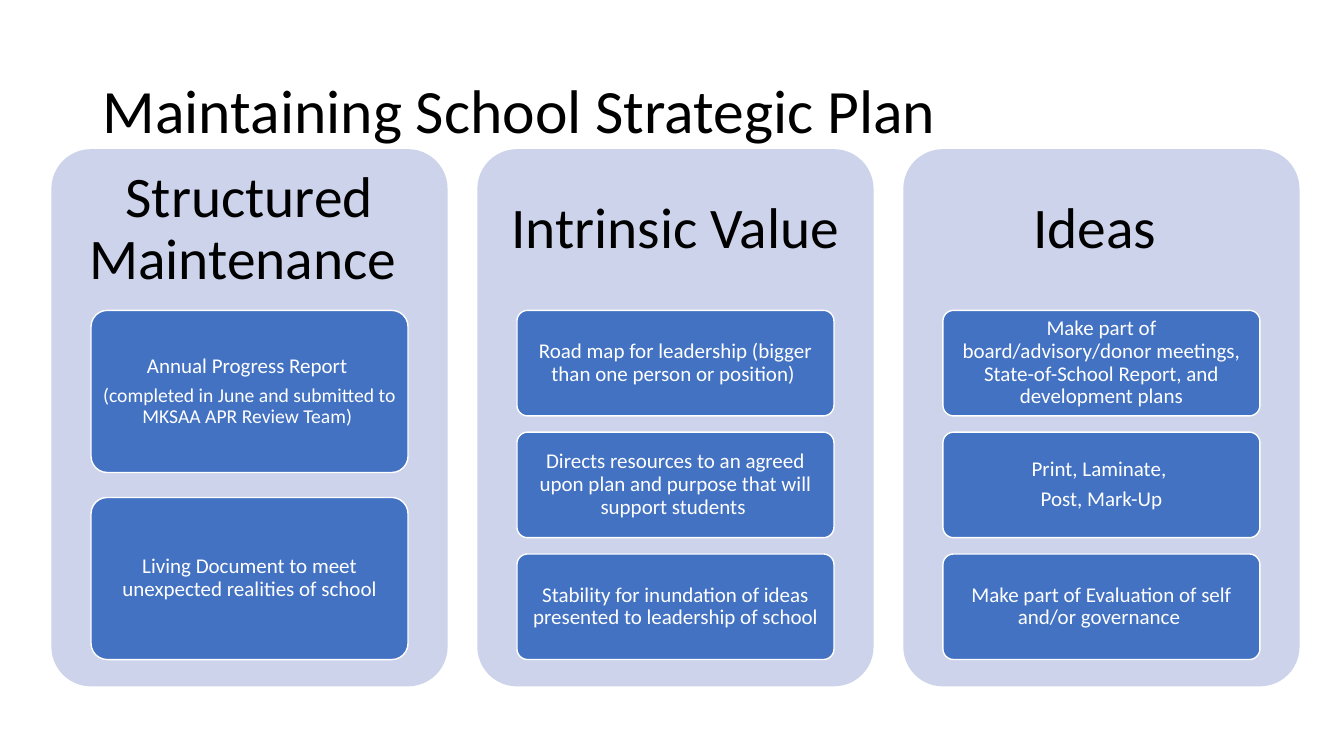
from dataclasses import dataclass

from pptx import Presentation
from pptx.dml.color import RGBColor
from pptx.enum.shapes import MSO_SHAPE
from pptx.enum.text import MSO_ANCHOR, PP_ALIGN
from pptx.util import Inches, Pt

ROUNDED = MSO_SHAPE.ROUNDED_RECTANGLE
MIDDLE = MSO_ANCHOR.MIDDLE
LEFT, CENTER = PP_ALIGN.LEFT, PP_ALIGN.CENTER

FONT = "Calibri"
BLACK, WHITE, PALE, BLUE = "000000", "FFFFFF", "CCD3EA", "4372C3"

SLIDE_W, SLIDE_H = 13.33, 7.5
PANEL_X, PANEL_Y, PANEL_W, PANEL_H = 0.51, 1.48, 3.93, 5.33
PANEL_PITCH = PANEL_W * 1.075
HEADING_SHARE, STACK_SHARE = 0.3, 0.65  # of the panel's height
CARD_SHARE = 0.8  # of the panel's width
GAP_SHARE = 0.154  # of a card's height


@dataclass(frozen=True)
class Box:
    x: float
    y: float
    w: float
    h: float

    def emu(self) -> list[int]:
        return [Inches(v) for v in (self.x, self.y, self.w, self.h)]


@dataclass(frozen=True)
class Line:
    text: str
    size: float = 15


@dataclass(frozen=True)
class Panel:
    heading: str
    cards: list[list[Line]]


PANELS = [
    Panel("Structured Maintenance ", [
        [Line("Annual Progress Report "),
         Line("(completed in June and submitted to MKSAA APR Review Team) ", 14)],
        [Line("Living Document to meet unexpected realities of school")],
    ]),
    Panel("Intrinsic Value", [
        [Line("Road map for leadership (bigger than one person or position) ")],
        [Line("Directs resources to an agreed upon plan and purpose that will "
              "support students ")],
        [Line("Stability for inundation of ideas presented to leadership of school")],
    ]),
    Panel("Ideas ", [
        [Line("Make part of board/advisory/donor meetings, State-of-School Report, "
              "and development plans")],
        [Line("Print, Laminate, "), Line("Post, Mark-Up")],
        [Line("Make part of Evaluation of self and/or governance ")],
    ]),
]


def rgb(value: str) -> RGBColor:
    return RGBColor.from_string(value)


def write(sp, lines: list[Line], color: str, inset_x: float, inset_y: float,
          align=CENTER) -> None:
    tf = sp.text_frame
    frame_format = {
        "word_wrap": True, "vertical_anchor": MIDDLE,
        "margin_left": Inches(inset_x), "margin_right": Inches(inset_x),
        "margin_top": Inches(inset_y), "margin_bottom": Inches(inset_y),
    }
    for name, value in frame_format.items():
        setattr(tf, name, value)
    for i, line in enumerate(lines):
        p = tf.add_paragraph() if i else tf.paragraphs[0]
        paragraph_format = {"alignment": align, "line_spacing": 0.9,
                            "space_before": Pt(5.2 if i else 0)}
        for name, value in paragraph_format.items():
            setattr(p, name, value)
        r = p.add_run()
        r.text = line.text
        r.font.name, r.font.size = FONT, Pt(line.size)
        r.font.color.rgb = rgb(color)


def add_text(s, box: Box, line: Line, inset_x: float, inset_y: float,
             align=CENTER) -> None:
    write(s.shapes.add_textbox(*box.emu()), [line], BLACK, inset_x, inset_y, align)


def add_rounded(s, box: Box, fill: str, outline: str | None = None):
    sp = s.shapes.add_shape(ROUNDED, *box.emu())
    sp.shadow.inherit = False
    sp.adjustments[0] = 0.1
    sp.fill.solid()
    sp.fill.fore_color.rgb = rgb(fill)
    if outline:
        sp.line.color.rgb = rgb(outline)
        sp.line.width = Pt(1)
    else:
        sp.line.fill.background()
    return sp


def stack(box: Box, count: int) -> list[Box]:
    """Split a box into equal rows whose gaps are a share of the row height."""
    h = box.h / (count + GAP_SHARE * (count - 1))
    return [Box(box.x, box.y + i * h * (1 + GAP_SHARE), box.w, h)
            for i in range(count)]


def add_panel(s, panel: Panel, column: int) -> None:
    x = PANEL_X + column * PANEL_PITCH
    heading_h = PANEL_H * HEADING_SHARE
    add_rounded(s, Box(x, PANEL_Y, PANEL_W, PANEL_H), PALE)
    add_text(s, Box(x, PANEL_Y, PANEL_W, heading_h), Line(panel.heading, 41),
             0.17, 0.17)
    cards_area = Box(x + PANEL_W * (1 - CARD_SHARE) / 2, PANEL_Y + heading_h,
                     PANEL_W * CARD_SHARE, PANEL_H * STACK_SHARE)
    for box, lines in zip(stack(cards_area, len(panel.cards)), panel.cards):
        write(add_rounded(s, box, BLUE, WHITE), lines, WHITE, 0.04, 0.03)


def main() -> None:
    prs = Presentation()
    prs.slide_width, prs.slide_height = Inches(SLIDE_W), Inches(SLIDE_H)
    s = prs.slides.add_slide(prs.slide_layouts[6])
    add_text(s, Box(0.92, 0.4, 11.5, 1.45),
             Line("Maintaining School Strategic Plan", 44), 0.1, 0.05, LEFT)
    for column, panel in enumerate(PANELS):
        add_panel(s, panel, column)
    prs.save("out.pptx")


if __name__ == "__main__":
    main()
